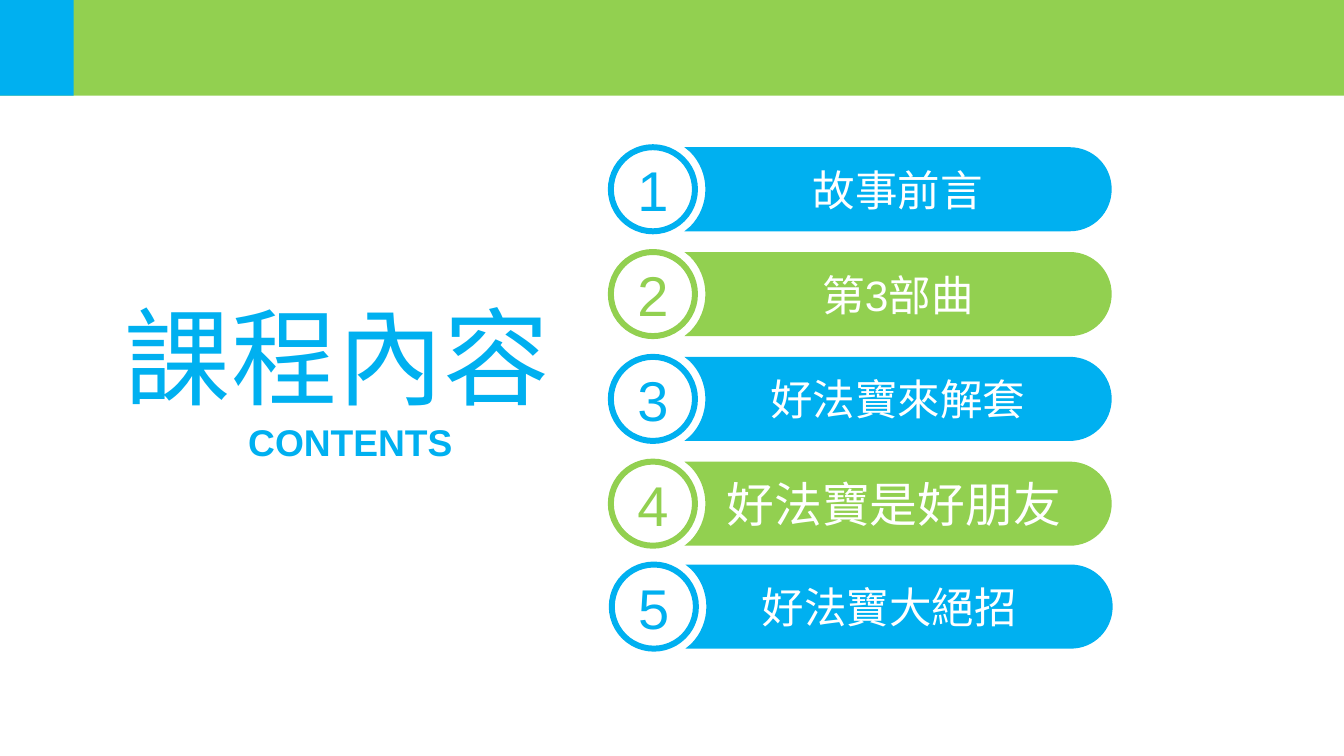
from dataclasses import dataclass

from lxml import etree
from pptx import Presentation
from pptx.dml.color import RGBColor
from pptx.enum.lang import MSO_LANGUAGE_ID
from pptx.enum.shapes import MSO_SHAPE
from pptx.enum.text import MSO_ANCHOR, MSO_AUTO_SIZE, PP_ALIGN
from pptx.oxml.ns import qn
from pptx.shapes.autoshape import Shape
from pptx.slide import Slide
from pptx.util import Inches, Pt

RECTANGLE, OVAL = MSO_SHAPE.RECTANGLE, MSO_SHAPE.OVAL
TOP, MIDDLE = MSO_ANCHOR.TOP, MSO_ANCHOR.MIDDLE
LEFT, CENTER = PP_ALIGN.LEFT, PP_ALIGN.CENTER
FIT_SHAPE = MSO_AUTO_SIZE.SHAPE_TO_FIT_TEXT
TRADITIONAL_CHINESE = MSO_LANGUAGE_ID.TRADITIONAL_CHINESE


@dataclass(frozen=True)
class Theme:
    blue: RGBColor = RGBColor(0x00, 0xB0, 0xF0)
    green: RGBColor = RGBColor(0x92, 0xD0, 0x50)
    white: RGBColor = RGBColor(0xFF, 0xFF, 0xFF)
    latin_font: str = "Arial"
    chinese_font: str = "Noto Sans CJK SC"
    title_size: float = 80
    subtitle_size: float = 28
    number_size: float = 42.2
    topic_size: float = 32
    large_topic_size: float = 36


THEME = Theme()


@dataclass(frozen=True)
class Topic:
    text: str
    color: RGBColor
    size: float = THEME.topic_size
    font: str = THEME.latin_font
    indent: float | None = None  # left-aligned when given
    nudge: tuple[float, float] = (0, 0)  # offset from the regular row


TOPICS = [
    Topic("故事前言", THEME.blue),
    Topic("第3部曲", THEME.green),
    Topic("好法寶來解套", THEME.blue),
    Topic("好法寶是好朋友", THEME.green, THEME.large_topic_size, THEME.chinese_font, 0.44),
    Topic("好法寶大絕招", THEME.blue, font=THEME.chinese_font, indent=0.8,
          nudge=(0.01, -0.02)),
]

# Topic list geometry, in inches
FIRST_TOP, FOURTH_TOP = 1.54, 4.83
PITCH = (FOURTH_TOP - FIRST_TOP) / 3
ROW_HEIGHT = 0.88
BADGE_LEFT = 6.39

# Bar outline: upper half from notch to round end, then its mirror image
UPPER_HALF = [(7.38, 0.44), (7.38, 0.29), (7.32, 0.15), (7.22, 0.05), (7.16, 0),
              (11.19, 0), (11.44, 0), (11.63, 0.2), (11.63, 0.44)]
LOWER_HALF = [(x, ROW_HEIGHT - y) for x, y in reversed(UPPER_HALF[:-1])]
CURVE_STARTS = (0, 5, 8, 13)  # segments that begin a three-point curve


def write_text(shape: Shape, text: str, size: float, color: RGBColor,
               font: str = THEME.latin_font, bold: bool = False,
               anchor: MSO_ANCHOR = MIDDLE, indent: float | None = None) -> None:
    frame = shape.text_frame
    frame.word_wrap = True
    frame.vertical_anchor = anchor
    frame.margin_left = Inches(indent or 0)
    frame.margin_right = frame.margin_top = frame.margin_bottom = 0
    paragraph = frame.paragraphs[0]
    paragraph.text = text
    paragraph.alignment = CENTER if indent is None else LEFT
    paragraph.font.size = Pt(size)
    paragraph.font.bold = bold
    paragraph.font.color.rgb = color
    paragraph.font.name = font
    paragraph.font.language_id = TRADITIONAL_CHINESE
    # East Asian typeface
    properties = paragraph._p.pPr.find(qn("a:defRPr"))
    etree.SubElement(properties, qn("a:ea"), typeface=THEME.chinese_font)


def paint(shape: Shape, fill: RGBColor, line: RGBColor | None = None) -> None:
    shape.shadow.inherit = False
    shape.fill.solid()
    shape.fill.fore_color.rgb = fill
    if line is None:
        shape.line.fill.background()
    else:
        shape.line.color.rgb = line
        shape.line.width = Pt(4.5)


def add_preset(slide: Slide, kind: MSO_SHAPE, left: float, top: float, width: float,
               height: float, fill: RGBColor, line: RGBColor | None = None) -> Shape:
    shape = slide.shapes.add_shape(
        kind, Inches(left), Inches(top), Inches(width), Inches(height))
    paint(shape, fill, line)
    return shape


def add_bar(slide: Slide, shift: float, top: float, color: RGBColor) -> Shape:
    """Bar with a round right end and a left notch that follows its badge."""
    points = [(Inches(x + shift), Inches(y + top)) for x, y in UPPER_HALF + LOWER_HALF]
    builder = slide.shapes.build_freeform(*points[0])
    builder.add_line_segments(points[1:], close=True)
    bar = builder.convert_to_shape()
    # Join each three-point group into one Bézier curve
    segments = list(bar._element.iter(qn("a:lnTo")))
    for start in CURVE_STARTS:
        curve, *others = segments[start:start + 3]
        curve.tag = qn("a:cubicBezTo")
        for segment in others:
            curve.append(segment[0])
            segment.getparent().remove(segment)
    paint(bar, color)
    return bar


def add_topic(slide: Slide, index: int, topic: Topic) -> None:
    shift, drop = topic.nudge
    top = FIRST_TOP + index * PITCH + drop
    bar = add_bar(slide, shift, top, topic.color)
    write_text(bar, topic.text, topic.size, THEME.white, topic.font, indent=topic.indent)
    badge = add_preset(slide, OVAL, BADGE_LEFT + shift, top, ROW_HEIGHT, ROW_HEIGHT,
                       THEME.white, topic.color)
    write_text(badge, str(index + 1), THEME.number_size, topic.color)


def add_heading(slide: Slide, text: str, left: float, top: float, width: float,
                height: float, size: float, bold: bool, anchor: MSO_ANCHOR) -> None:
    box = slide.shapes.add_textbox(Inches(left), Inches(top), Inches(width), Inches(height))
    write_text(box, text, size, THEME.blue, bold=bold, anchor=anchor)
    box.text_frame.auto_size = FIT_SHAPE


def main() -> None:
    presentation = Presentation()
    presentation.slide_width, presentation.slide_height = Inches(14.06), Inches(7.91)
    slide = presentation.slides.add_slide(presentation.slide_layouts[6])

    # Header band
    add_preset(slide, RECTANGLE, 0, 0, 14.06, 1, THEME.green)
    add_preset(slide, RECTANGLE, 0, 0, 0.77, 1, THEME.blue)

    # Numbered topics
    for index, topic in enumerate(TOPICS):
        add_topic(slide, index, topic)

    # Headings
    add_heading(slide, "課程內容", 0.97, 3.04, 5.12, 1.35, THEME.title_size, False, MIDDLE)
    add_heading(slide, "CONTENTS", 2.11, 4.39, 3.11, 0.47, THEME.subtitle_size, True, TOP)

    presentation.save("out.pptx")


if __name__ == "__main__":
    main()
